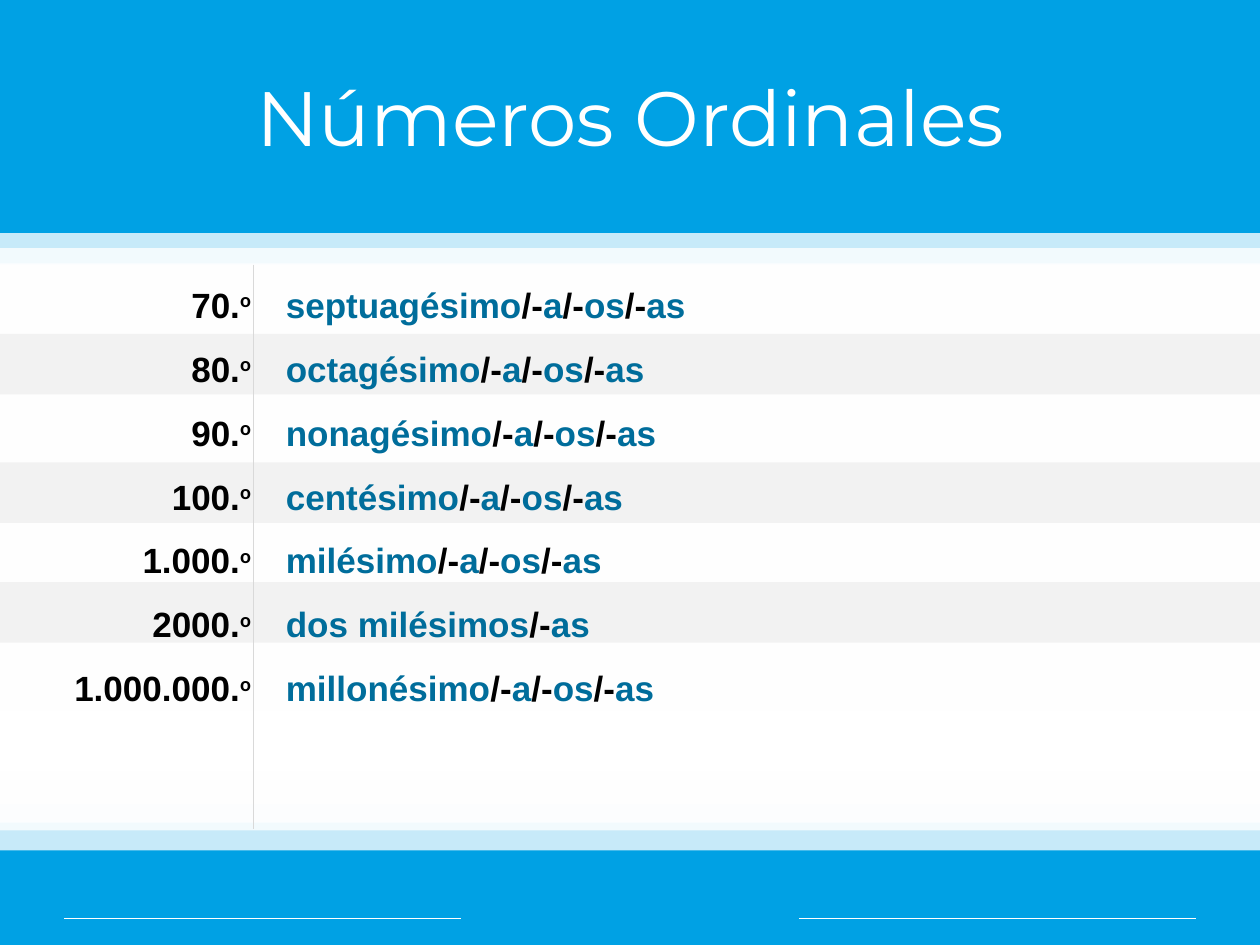
from dataclasses import dataclass

from lxml import etree
from pptx import Presentation
from pptx.dml import color
from pptx.enum import shapes, text
from pptx.oxml import ns
from pptx.util import Inches, Pt


@dataclass(frozen=True)
class Theme:
    blue: str = "00A1E4"
    white: str = "FFFFFF"
    stripe: str = "F2F2F2"
    rule: str = "D9D9D9"
    ink: str = "000000"
    accent: str = "006D9B"
    title_font: str = "Montserrat"
    body_font: str = "Arial"
    ordinal_font: str = "Calibri"
    title_size: float = 44
    body_size: float = 20
    line_spacing: float = 1.3
    row_gap: float = 5.3
    veil_alpha: int = 78


THEME = Theme()
ENDINGS = ["a", "os", "as"]
ORDINALS = [
    ("70.", ["septuagésimo", *ENDINGS]),
    ("80.", ["octagésimo", *ENDINGS]),
    ("90.", ["nonagésimo", *ENDINGS]),
    ("100.", ["centésimo", *ENDINGS]),
    ("1.000.", ["milésimo", *ENDINGS]),
    ("2000.", ["dos milésimos", "as"]),
    ("1.000.000.", ["millonésimo", *ENDINGS]),
]
VEILS = [
    (2.09, 0.71), (1.97, 0.71), (1.85, 0.51), (2.95, 3.58), (2.1, 4.09),
    (2.53, 3.38), (5.83, 0.92), (5.67, 0.92), (2.2, 4.18),
]
STRIPES = [
    (4.62, THEME.stripe), (3.67, THEME.stripe),
    (2.65, THEME.stripe), (5.64, THEME.white),
]


def rgb(value):
    return color.RGBColor.from_string(value)


def add_band(slide, box, fill, alpha=100):
    band = slide.shapes.add_shape(
        shapes.MSO_SHAPE.RECTANGLE, *map(Inches, box))
    band.shadow.inherit = False
    band.line.fill.background()
    band.fill.solid()
    band.fill.fore_color.rgb = rgb(fill)
    if alpha < 100:
        tint = band._element.spPr.find(".//" + ns.qn("a:srgbClr"))
        etree.SubElement(tint, ns.qn("a:alpha")).set("val", str(alpha * 1000))


def add_rule(slide, start, end, stroke, width):
    rule = slide.shapes.add_connector(
        shapes.MSO_CONNECTOR.STRAIGHT, *map(Inches, start + end))
    rule.line.color.rgb = rgb(stroke)
    rule.line.width = Pt(width)
    etree.SubElement(rule._element.spPr, ns.qn("a:effectLst"))


def add_part(paragraph, wording, ink, font=THEME.body_font):
    part = paragraph.add_run()
    part.text = wording
    part.font.name = font
    part.font.size = Pt(THEME.body_size)
    part.font.bold = True
    part.font.color.rgb = rgb(ink)
    return part


def add_numeral(paragraph, numeral):
    paragraph.alignment = text.PP_ALIGN.RIGHT
    add_part(paragraph, numeral, THEME.ink)
    ordinal = add_part(paragraph, "o", THEME.ink, THEME.ordinal_font)
    ordinal._r.get_or_add_rPr().set("baseline", "30000")


def add_word_forms(paragraph, forms):
    for index, form in enumerate(forms):
        if index:
            add_part(paragraph, "/-", THEME.ink)
        add_part(paragraph, form, THEME.accent)


def add_column(slide, box, entries, write_entry):
    frame = slide.shapes.add_textbox(*map(Inches, box)).text_frame
    frame.word_wrap = True
    for index, entry in enumerate(entries):
        paragraph = frame.add_paragraph() if index else frame.paragraphs[0]
        paragraph.line_spacing = THEME.line_spacing
        paragraph.space_before = Pt(THEME.row_gap if index else 0)
        write_entry(paragraph, entry)


def add_title(slide, box):
    title = slide.shapes.title
    title.left, title.top, title.width, title.height = map(Inches, box)
    frame = title.text_frame
    frame.text = "Números Ordinales"
    frame.vertical_anchor = text.MSO_ANCHOR.MIDDLE
    heading = frame.paragraphs[0]
    heading.alignment = text.PP_ALIGN.CENTER
    font = heading.runs[0].font
    font.name = THEME.title_font
    font.size = Pt(THEME.title_size)
    font.color.rgb = rgb(THEME.white)


def add_footer(slide, box):
    left, top, width, height = box
    margin, gap = 0.51, 2.68
    rule_top = top + 0.31
    add_band(slide, box, THEME.blue)
    add_rule(slide, (left + margin, rule_top),
             (left + width - margin, rule_top), THEME.white, 0.25)
    add_band(slide, (left + (width - gap) / 2, top, gap, height), THEME.blue)


def add_panel(slide, left, width):
    for top, height in VEILS:
        add_band(slide, (left, top, width, height),
                 THEME.white, THEME.veil_alpha)
    for top, fill in STRIPES:
        add_band(slide, (left, top, width, 0.48), fill)


def add_ordinals(slide, box):
    left, top, width, height = box
    divider = left + 2.01
    numerals, word_forms = zip(*ORDINALS)
    add_rule(slide, (divider, top), (divider, top + height), THEME.rule, 0.75)
    add_column(slide, (left, top, 2.09, 4.07), numerals, add_numeral)
    add_column(slide, (left + 2.17, top, width - 2.17, 3.57),
               word_forms, add_word_forms)


def main():
    deck = Presentation()
    deck.slide_width, deck.slide_height = Inches(10), Inches(7.5)
    slide = deck.slides.add_slide(deck.slide_layouts[5])
    backdrop = slide.background.fill
    backdrop.solid()
    backdrop.fore_color.rgb = rgb(THEME.blue)
    add_footer(slide, (0, 6.98, 10, 0.52))
    add_panel(slide, 0, 10)
    add_title(slide, (0.2, 0.21, 9.61, 1.42))
    add_ordinals(slide, (0, 2.1, 8.39, 4.48))
    deck.save("out.pptx")


if __name__ == "__main__":
    main()
